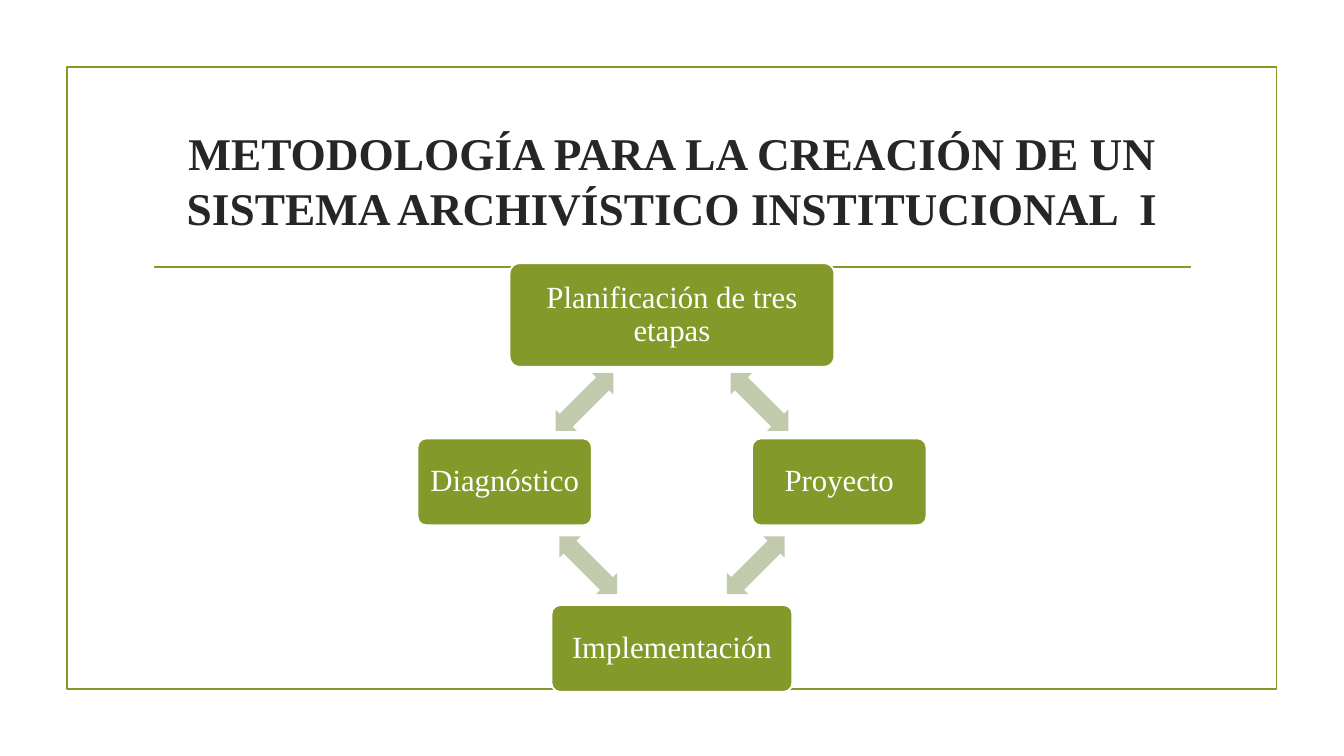
from pptx import Presentation
from pptx.dml.color import RGBColor
from pptx.enum.shapes import MSO_CONNECTOR, MSO_SHAPE
from pptx.enum.text import MSO_ANCHOR, PP_ALIGN
from pptx.util import Pt
from lxml.etree import SubElement
from pptx.oxml.ns import qn

FONT = "Times New Roman"
GREEN, PALE, WHITE, DARK = "83992A", "C1CAAD", "FFFFFF", "262626"
TITLE = "METODOLOGÍA PARA LA CREACIÓN DE UN SISTEMA ARCHIVÍSTICO INSTITUCIONAL  I"
MID = 480
STEPS = [
    ("Planificación de tres etapas", 0, 225, 232, 74),
    ("Proyecto", 119.5, 344.2, 124.5, 62),
    ("Implementación", 0, 463.2, 172, 62),
    ("Diagnóstico", -119.5, 344.2, 124.5, 62),
]
ARROWS = [(62.5, 287.2, 45), (59.8, 403.8, 135), (-59.8, 403.8, 225), (-62.5, 287.2, 315)]


def tint(hue):
    return RGBColor.from_string(hue)


def add_box(kind, x, y, wide, high, fill=None, edge=None):
    box = slide.shapes.add_shape(kind, Pt(x), Pt(y), Pt(wide), Pt(high))
    box.shadow.inherit = False
    if fill:
        box.fill.solid()
        box.fill.fore_color.rgb = tint(fill)
    else:
        box.fill.background()
    if edge:
        box.line.color.rgb = tint(edge)
        box.line.width = Pt(1.25)
    else:
        box.line.fill.background()
    return box


def add_text(box, text, size, hue, bold=False, pad=7.2, lines=None):
    frame = box.text_frame
    frame.word_wrap = True
    frame.vertical_anchor = MSO_ANCHOR.MIDDLE
    frame.margin_left = frame.margin_right = Pt(pad)
    para = frame.paragraphs[0]
    para.alignment = PP_ALIGN.CENTER
    if lines:
        para.line_spacing = lines
    run = para.add_run()
    run.text = text
    run.font.name = FONT
    run.font.size = Pt(size)
    run.font.bold = bold
    run.font.color.rgb = tint(hue)


deck = Presentation()
deck.slide_width, deck.slide_height = Pt(960), Pt(540)
slide = deck.slides.add_slide(deck.slide_layouts[6])

add_box(MSO_SHAPE.RECTANGLE, 47.8, 48, 864, 444, edge=GREEN)
rule = slide.shapes.add_connector(MSO_CONNECTOR.STRAIGHT, Pt(110), Pt(190.8), Pt(850.5), Pt(190.8))
rule.line.color.rgb = tint(GREEN)
rule.line.width = Pt(1.25)
SubElement(rule._element.spPr, qn("a:effectLst"))

title = slide.shapes.add_textbox(Pt(102), Pt(77), Pt(756), Pt(103))
add_text(title, TITLE, 32.4, DARK, bold=True)

for text, dx, y, wide, high in STEPS:
    step = add_box(MSO_SHAPE.ROUNDED_RECTANGLE, MID + dx - wide / 2, y - high / 2, wide, high, GREEN, WHITE)
    step.adjustments[0] = 0.1
    add_text(step, text, 22, WHITE, pad=6.5, lines=0.9)

for dx, y, turn in ARROWS:
    arrow = add_box(MSO_SHAPE.LEFT_RIGHT_ARROW, MID + dx - 29.2, y - 10.8, 58.4, 21.6, PALE)
    arrow.adjustments[0] = 0.6
    arrow.adjustments[1] = 0.5
    arrow.rotation = turn

deck.save("out.pptx")
